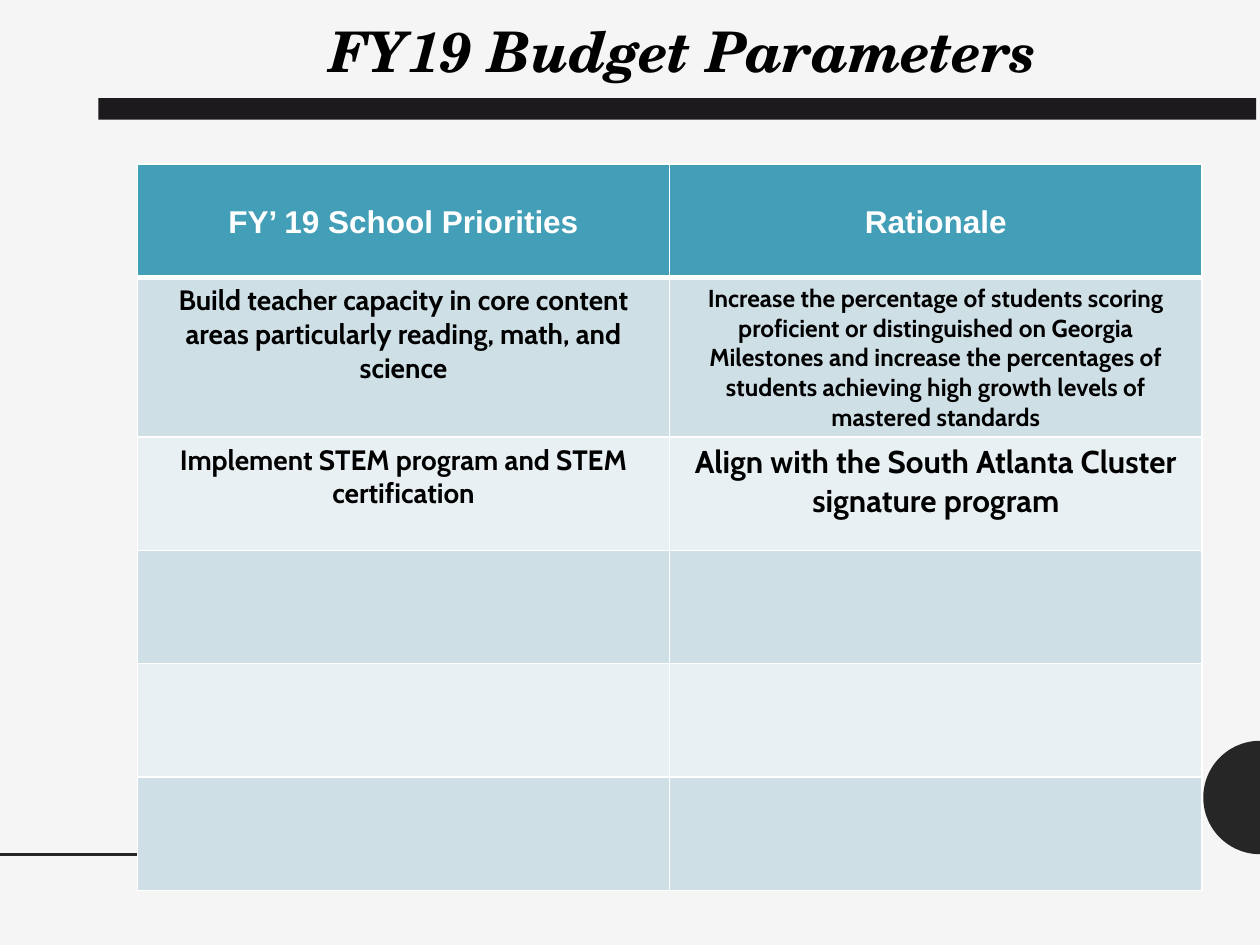
import math

from lxml import etree
from pptx import Presentation
from pptx.dml.color import RGBColor
from pptx.enum import shapes, text
from pptx.oxml import ns
from pptx.util import Inches, Pt

DARK, BLACK, WHITE = "262626", "000000", "FFFFFF"
HEADER_FILL, BAND_FILLS = "439EB7", ["CFDFE6", "E9F0F3"]


def color(hex_string):
    return RGBColor.from_string(hex_string)


def add_border(cell, side, width):
    """Draw one white cell edge; side is L, R, T or B, width in points."""
    line = etree.SubElement(cell._tc.get_or_add_tcPr(), ns.qn(f"a:ln{side}"), w=str(Pt(width)))
    fill = etree.SubElement(line, ns.qn("a:solidFill"))
    etree.SubElement(fill, ns.qn("a:srgbClr"), val=WHITE)


presentation = Presentation()
presentation.slide_width = Inches(10)
presentation.slide_height = Inches(7.5)
slide = presentation.slides.add_slide(presentation.slide_layouts[6])
slide.background.fill.solid()
slide.background.fill.fore_color.rgb = color("F5F5F5")

# Half circle on the right edge
center_x, center_y, radius, steps = 10, 6.33, 0.45, 48
arc = []
for step in range(steps + 1):
    angle = math.pi * (0.5 + step / steps)
    arc.append((Inches(center_x + radius * math.cos(angle)),
                Inches(center_y + radius * math.sin(angle))))
builder = slide.shapes.build_freeform(*arc[0])
builder.add_line_segments(arc[1:], close=True)
half_circle = builder.convert_to_shape()

title_bar = slide.shapes.add_shape(
    shapes.MSO_SHAPE.RECTANGLE, Inches(0.78), Inches(0.78), Inches(9.19), Inches(0.17))

for shape, fill in ((half_circle, DARK), (title_bar, "1D1A1D")):
    shape.shadow.inherit = False
    shape.fill.solid()
    shape.fill.fore_color.rgb = color(fill)
    shape.line.fill.background()

# Footer line, running behind the table
footer_line = slide.shapes.add_connector(
    shapes.MSO_CONNECTOR.STRAIGHT, Inches(0), Inches(6.78), Inches(3.69), Inches(6.78))
footer_line.line.color.rgb = color(DARK)
footer_line.line.width = Pt(2)
etree.SubElement(footer_line._element.spPr, ns.qn("a:effectLst"))

# Title
title = slide.shapes.add_textbox(Inches(0.96), Inches(0.08), Inches(8.93), Inches(0.64))
title.text_frame.word_wrap = True
title.text_frame.auto_size = text.MSO_AUTO_SIZE.SHAPE_TO_FIT_TEXT
title.text_frame.text = "FY19 Budget Parameters"
paragraph = title.text_frame.paragraphs[0]
paragraph.alignment = text.PP_ALIGN.CENTER
font = paragraph.runs[0].font
font.name, font.size, font.bold, font.italic = "TeX Gyre Schola", Pt(32), True, True
font.color.rgb = color(BLACK)

# Priorities table: each cell is its text and text size
rows = [
    [("FY’ 19 School Priorities", 18), ("Rationale", 18)],
    [("Build teacher capacity in core content areas particularly reading, math, and science", 16),
     ("Increase the percentage of students scoring proficient or distinguished on Georgia "
      "Milestones and increase the percentages of students achieving high growth levels of "
      "mastered standards", 14)],
    [("Implement STEM program and STEM certification", 16),
     ("Align with the South Atlanta Cluster signature program", 18)],
    [("", 18)] * 2,
    [("", 18)] * 2,
    [("", 18)] * 2,
]
row_height = 0.9
table = slide.shapes.add_table(
    len(rows), 2, Inches(1.09), Inches(1.3), Inches(8.45), Inches(row_height * len(rows))).table
table.first_row = table.horz_banding = False

for row_index, row in enumerate(rows):
    is_header = row_index == 0
    for column_index, (words, size) in enumerate(row):
        cell = table.cell(row_index, column_index)
        for side in "LRTB":
            under_header = (row_index, side) in ((0, "B"), (1, "T"))
            add_border(cell, side, 3 if under_header else 1)
        cell.fill.solid()
        cell.fill.fore_color.rgb = color(HEADER_FILL if is_header else BAND_FILLS[(row_index - 1) % 2])
        if is_header:
            cell.margin_top = Inches(0.33)
        cell.text_frame.text = words
        paragraph = cell.text_frame.paragraphs[0]
        paragraph.alignment = text.PP_ALIGN.CENTER
        for run in paragraph.runs:
            run.font.name = "Arial" if is_header else "Cabin"
            run.font.size = Pt(size)
            run.font.bold = True
            run.font.color.rgb = color(WHITE if is_header else BLACK)

presentation.save("out.pptx")
